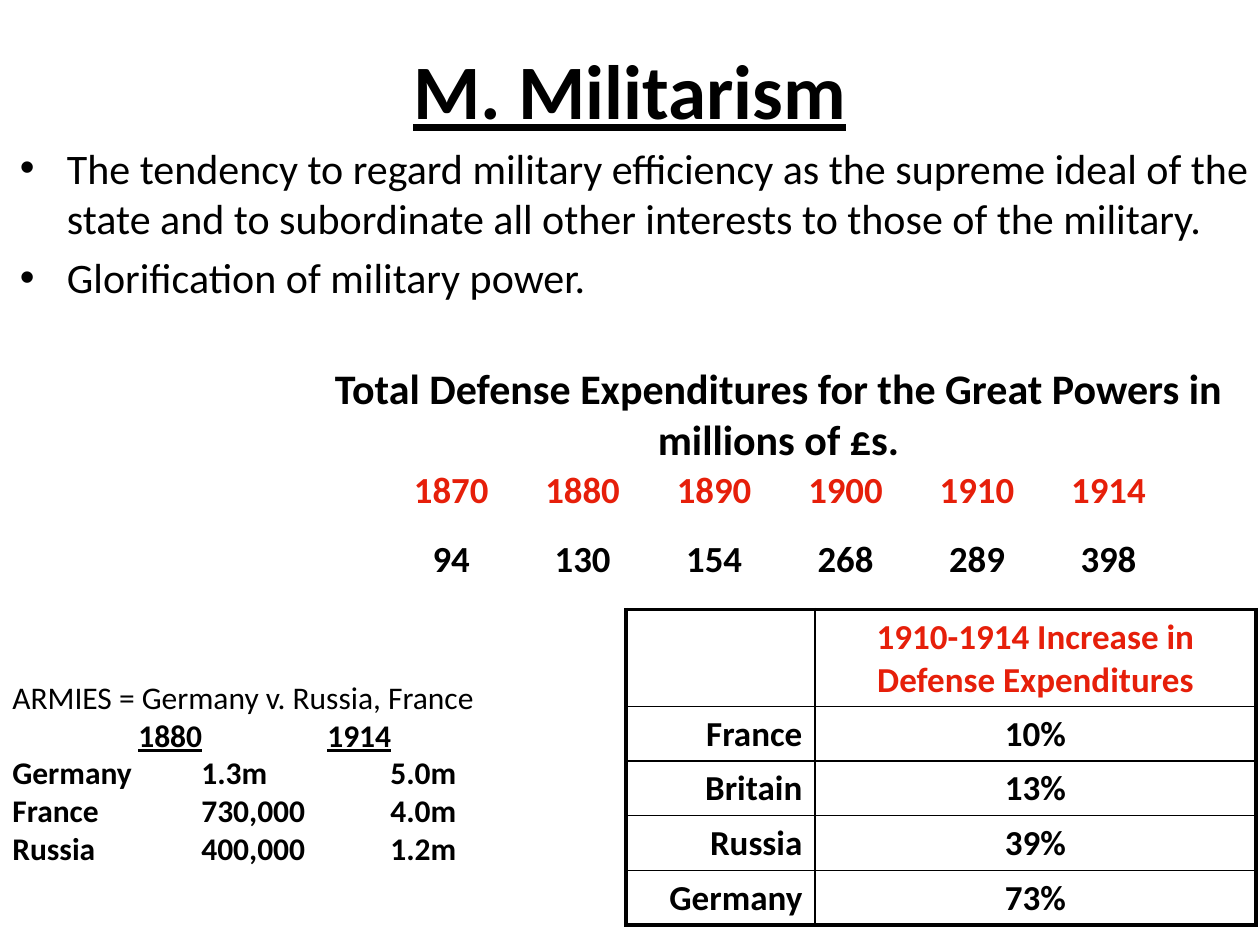
from dataclasses import dataclass

import lxml.etree
import pptx
import pptx.dml.color
import pptx.enum.text
import pptx.oxml.ns
import pptx.util

Cm = pptx.util.Cm
Pt = pptx.util.Pt
RGBColor = pptx.dml.color.RGBColor
ALIGN = pptx.enum.text.PP_ALIGN
ANCHOR = pptx.enum.text.MSO_ANCHOR
qn = pptx.oxml.ns.qn

BLACK = RGBColor(0x00, 0x00, 0x00)
RED = RGBColor(0xE6, 0x1F, 0x0A)
OUTER_LINE = Pt(2.25)
INNER_LINE = Pt(1)


@dataclass(frozen=True)
class Box:
    left: float
    top: float
    width: float
    height: float


@dataclass(frozen=True)
class Run:
    text: str
    size: float
    bold: bool = False
    underline: bool = False
    color: RGBColor = BLACK


@dataclass(frozen=True)
class Grid:
    box: Box
    rows: list[list[Run]]
    widths: list[float]
    heights: list[float]
    alignments: list[ALIGN]
    anchor: ANCHOR
    ruled: bool


def place(shape, box: Box) -> None:
    for name in ("left", "top", "width", "height"):
        setattr(shape, name, Cm(getattr(box, name)))


def write_paragraph(paragraph, runs: list[Run], alignment: ALIGN) -> None:
    paragraph.alignment = alignment
    for item in runs:
        run = paragraph.add_run()
        run.text = item.text
        run.font.color.rgb = item.color
        formats = {
            "name": "Calibri",
            "size": Pt(item.size),
            "bold": item.bold,
            "underline": item.underline,
        }
        for name, value in formats.items():
            setattr(run.font, name, value)


def add_bullet(paragraph) -> None:
    paragraph.space_after = Pt(5)
    properties = paragraph._p.get_or_add_pPr()
    properties.set("marL", str(Cm(0.95)))
    properties.set("indent", str(-Cm(0.95)))
    lxml.etree.SubElement(properties, qn("a:buFont")).set("typeface", "Arial")
    lxml.etree.SubElement(properties, qn("a:buChar")).set("char", "•")


def add_text(slide, box: Box, lines: list[list[Run]],
             alignment: ALIGN = ALIGN.LEFT, bulleted: bool = False) -> None:
    shape = slide.shapes.add_textbox(0, 0, 0, 0)
    place(shape, box)
    frame = shape.text_frame
    frame.word_wrap = True
    for index, runs in enumerate(lines):
        paragraph = frame.add_paragraph() if index else frame.paragraphs[0]
        write_paragraph(paragraph, runs, alignment)
        if bulleted:
            add_bullet(paragraph)


def add_borders(cell, outer_sides: dict[str, bool]) -> None:
    properties = cell._tc.get_or_add_tcPr()
    for index, (side, is_outer) in enumerate(outer_sides.items()):
        line = lxml.etree.Element(qn(f"a:{side}"))
        line.set("w", str(OUTER_LINE if is_outer else INNER_LINE))
        fill = lxml.etree.SubElement(line, qn("a:solidFill"))
        lxml.etree.SubElement(fill, qn("a:srgbClr")).set("val", str(BLACK))
        properties.insert(index, line)


def add_grid(slide, grid: Grid) -> None:
    last_row, last_column = len(grid.heights) - 1, len(grid.widths) - 1
    frame = slide.shapes.add_table(last_row + 1, last_column + 1, 0, 0, 0, 0)
    place(frame, grid.box)
    table = frame.table
    table.first_row = table.horz_banding = False
    for column, width in zip(table.columns, grid.widths):
        column.width = Cm(width)
    for row, height in zip(table.rows, grid.heights):
        row.height = Cm(height)
    for row_index, runs in enumerate(grid.rows):
        for column_index, run in enumerate(runs):
            cell = table.cell(row_index, column_index)
            cell.fill.background()
            cell.vertical_anchor = grid.anchor
            write_paragraph(cell.text_frame.paragraphs[0], [run] if run.text else [],
                            grid.alignments[column_index])
            if grid.ruled:
                add_borders(cell, {
                    "lnL": column_index == 0,
                    "lnR": column_index == last_column,
                    "lnT": row_index == 0,
                    "lnB": row_index == last_row,
                })


def table_runs(rows: list[list[str]], size: float) -> list[list[Run]]:
    return [[Run(text, size, bold=True, color=BLACK if index else RED) for text in row]
            for index, row in enumerate(rows)]


def main() -> None:
    presentation = pptx.Presentation()
    presentation.slide_width = Cm(25.4)
    presentation.slide_height = Cm(19.05)
    slide = presentation.slides.add_slide(presentation.slide_layouts[5])

    title = slide.shapes.title
    place(title, Box(1.27, 0.2, 22.86, 3.18))
    title.text_frame.vertical_anchor = ANCHOR.MIDDLE
    write_paragraph(title.text_frame.paragraphs[0],
                    [Run("M. Militarism", 44, bold=True, underline=True)], ALIGN.CENTER)

    definitions = [
        "The tendency to regard military efficiency as the supreme ideal of the "
        "state and to subordinate all other interests to those of the military.",
        "Glorification of military power.",
    ]
    add_text(slide, Box(0.15, 2.74, 25.3, 2.97),
             [[Run(text, 24)] for text in definitions], bulleted=True)

    expenditures = [
        ["1870", "1880", "1890", "1900", "1910", "1914"],
        ["94", "130", "154", "268", "289", "398"],
    ]
    add_grid(slide, Grid(Box(7.77, 9.32, 15.88, 2.75), table_runs(expenditures, 21),
                         [2.65] * 6, [1.12, 1.63], [ALIGN.CENTER] * 6,
                         ANCHOR.MIDDLE, ruled=False))
    heading = "Total Defense Expenditures for the Great Powers in millions of £s."
    add_text(slide, Box(6.07, 7.19, 19.25, 2.31),
             [[Run(heading, 24, bold=True)]], ALIGN.CENTER)

    increases = [
        ["", "1910-1914 Increase in Defense Expenditures"],
        ["France", "10%"],
        ["Britain", "13%"],
        ["Russia", "39%"],
        ["Germany", "73%"],
    ]
    add_grid(slide, Grid(Box(12.62, 12.29, 12.7, 6.35), table_runs(increases, 20),
                         [3.81, 8.89], [1.95] + [1.1] * 4,
                         [ALIGN.RIGHT, ALIGN.CENTER], ANCHOR.TOP, ruled=True))

    gap = "\t\t"
    armies = [
        ["Germany", "1.3m", "5.0m"],
        ["France", "730,000", "4.0m"],
        ["Russia", "400,000", "1.2m"],
    ]
    years = [run for year in ("1880", "1914")
             for run in (Run(gap, 18), Run(year, 18, bold=True, underline=True))]
    add_text(slide, Box(0, 13.54, 12.5, 4.88),
             [[Run("ARMIES = Germany v. Russia, France", 18)], years]
             + [[Run(gap.join(row), 18, bold=True)] for row in armies])

    presentation.save("out.pptx")


if __name__ == "__main__":
    main()
